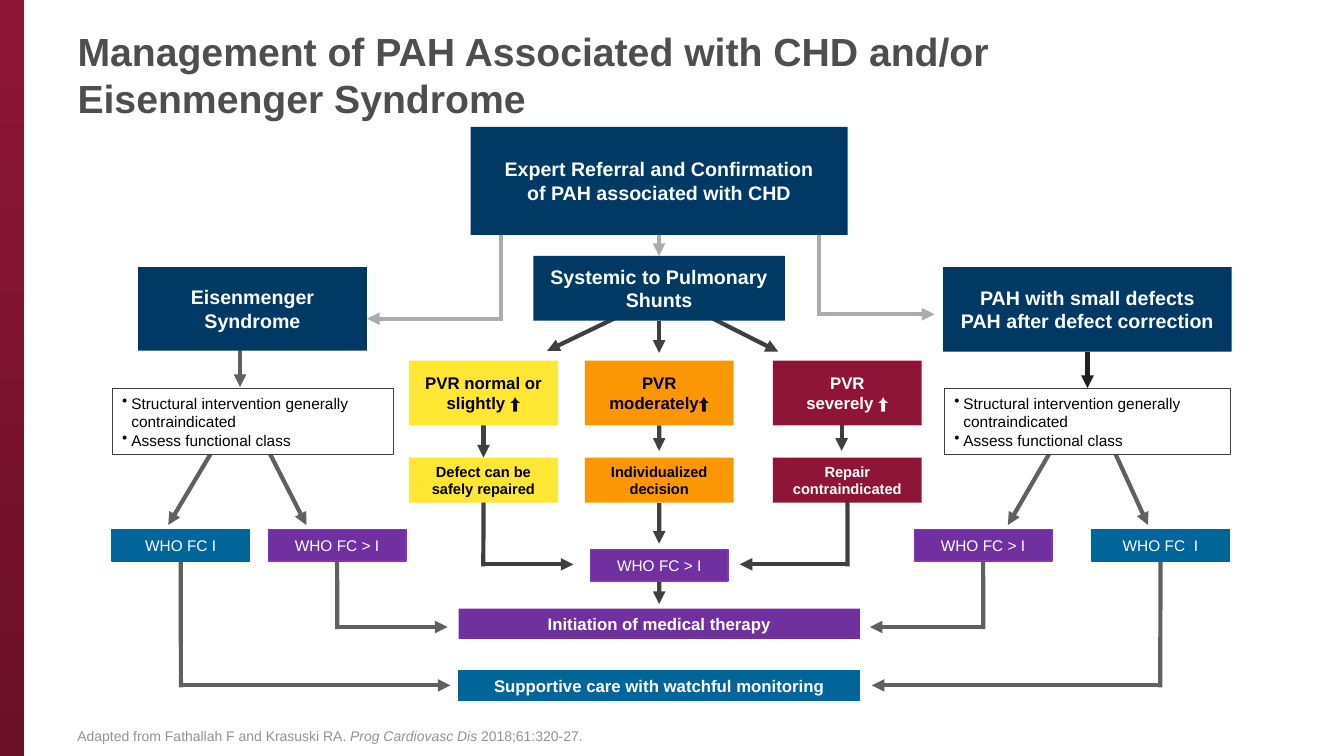
from lxml.etree import SubElement
from pptx import Presentation
from pptx.dml.color import RGBColor
from pptx.enum.shapes import MSO_CONNECTOR, MSO_SHAPE
from pptx.enum.text import MSO_ANCHOR, MSO_AUTO_SIZE, PP_ALIGN
from pptx.oxml.ns import qn
from pptx.util import Cm, Pt

WHITE = RGBColor(0xFF, 0xFF, 0xFF)
BLACK = RGBColor(0x00, 0x00, 0x00)
NAVY = RGBColor(0x00, 0x3A, 0x64)
BLUE = RGBColor(0x00, 0x66, 0x99)
PURPLE = RGBColor(0x70, 0x30, 0xA0)
VIOLET = RGBColor(0x80, 0x36, 0xBB)
YELLOW = RGBColor(0xFF, 0xE7, 0x33)
ORANGE = RGBColor(0xFB, 0x97, 0x05)
WINE = RGBColor(0x8E, 0x15, 0x37)
MAROON = RGBColor(0x6B, 0x10, 0x29)
INK = RGBColor(0x20, 0x20, 0x20)
DARK = RGBColor(0x3F, 0x3F, 0x3F)
GREY = RGBColor(0x60, 0x60, 0x60)
LIGHT = RGBColor(0xAA, 0xAC, 0xB1)
HEAD = RGBColor(0x4D, 0x4E, 0x4D)
NOTE = RGBColor(0x93, 0x93, 0x93)

prs = Presentation()
prs.slide_width, prs.slide_height = Cm(33.87), Cm(19.05)
slide = prs.slides.add_slide(prs.slide_layouts[5])
shapes = slide.shapes


def add_box(text, x, y, w, h, fill, size, color=WHITE, bold=True, edge=None, width=1):
    box = shapes.add_shape(MSO_SHAPE.RECTANGLE, Cm(x), Cm(y), Cm(w), Cm(h))
    box.shadow.inherit = False
    box.fill.solid()
    box.fill.fore_color.rgb = fill
    if edge is None:
        box.line.fill.background()
    else:
        box.line.color.rgb = edge
        box.line.width = Pt(width)
    frame = box.text_frame
    frame.text = text
    frame.word_wrap = True
    frame.vertical_anchor = MSO_ANCHOR.MIDDLE
    for par in frame.paragraphs:
        par.alignment = PP_ALIGN.CENTER
        par.font.name = "Arial"
        par.font.size = Pt(size)
        par.font.bold = bold
        par.font.color.rgb = color
    return box


def add_link(color, *stops):
    """Draw an arrow behind the boxes through points in cm; a box as
    first stop is left at its bottom, as last stop reached at its top."""
    spots = []
    for stop in stops:
        if isinstance(stop, tuple):
            spots.append((Cm(stop[0]), Cm(stop[1])))
        else:
            down = stop.height if stop is stops[0] else 0
            spots.append((stop.left + stop.width // 2, stop.top + down))
    last = len(spots) - 2
    for i, (start, end) in enumerate(zip(spots, spots[1:])):
        line = shapes.add_connector(MSO_CONNECTOR.STRAIGHT, *start, *end)
        line.line.color.rgb = color
        line.line.width = Pt(3)
        SubElement(line.element.spPr, qn("a:effectLst"))
        if not isinstance(stops[i], tuple):
            line.begin_connect(stops[i], 2)
        if not isinstance(stops[i + 1], tuple):
            line.end_connect(stops[i + 1], 0)
        ln = line.line._get_or_add_ln()
        if i == last:
            SubElement(ln, qn("a:tailEnd"), type="triangle")
        else:
            ln.set("cap", "sq")
        line.element.getparent().insert(2, line.element)


# Side band, title and citation
band = shapes.add_shape(MSO_SHAPE.RECTANGLE, 0, 0, Cm(0.61), prs.slide_height)
band.shadow.inherit = False
band.line.fill.background()
band.fill.gradient()
band.fill.gradient_angle = 270
for stop, color in zip(band.fill.gradient_stops, (WINE, MAROON)):
    stop.color.rgb = color

title = shapes.title
title.left, title.top, title.width, title.height = Cm(1.7), Cm(0.56), Cm(29.2), Cm(3.3)
frame = title.text_frame
frame.text = "Management of PAH Associated with CHD and/or Eisenmenger Syndrome"
frame.word_wrap = True
frame.auto_size = MSO_AUTO_SIZE.NONE
frame.vertical_anchor = MSO_ANCHOR.TOP
par = frame.paragraphs[0]
par.alignment = PP_ALIGN.LEFT
par.font.name, par.font.size, par.font.bold = "Arial", Pt(28), True
par.font.color.rgb = HEAD

cite = shapes.add_textbox(Cm(1.7), Cm(17.65), Cm(29.85), Cm(1.22)).text_frame
cite.word_wrap = True
cite.vertical_anchor = MSO_ANCHOR.BOTTOM
par = cite.paragraphs[0]
par.font.name, par.font.size = "Arial", Pt(10)
par.font.color.rgb = NOTE
for text, slant in (
    ("Adapted from Fathallah F and Krasuski RA. ", False),
    ("Prog Cardiovasc Dis ", True),
    ("2018;61:320-27.", False),
):
    run = par.add_run()
    run.text = text
    run.font.italic = slant

# Referral and the three diagnoses
expert = add_box("Expert Referral and Confirmation\nof PAH associated with CHD",
                 11.86, 3.2, 9.5, 2.72, NAVY, 14)
shunts = add_box("Systemic to Pulmonary Shunts", 13.44, 6.45, 6.34, 1.63, NAVY, 14)
add_box("Eisenmenger Syndrome", 3.48, 6.73, 5.77, 2.11, NAVY, 14)
small = add_box("PAH with small defects\nPAH after defect correction",
                23.77, 6.73, 7.27, 2.13, NAVY, 14)

# Resistance grades and the decision for each
grades, plans = [], []
for x, fill, color, grade, plan in (
    (10.31, YELLOW, BLACK, "PVR normal or slightly ⬆", "Defect can be safely repaired"),
    (14.74, ORANGE, BLACK, "PVR moderately⬆", "Individualized decision"),
    (19.48, WINE, WHITE, "PVR\nseverely ⬆", "Repair contraindicated"),
):
    grades.append(add_box(grade, x, 9.09, 3.75, 1.63, fill, 12, color))
    plans.append(add_box(plan, x, 11.53, 3.75, 1.14, fill, 10.5, color))

# Advice lists
lists = []
for x, w in ((2.83, 7.09), (23.8, 7.21)):
    advice = add_box("Structural intervention generally contraindicated\nAssess functional class",
                     x, 9.78, w, 1.68, WHITE, 11, BLACK, False, DARK, 0.75)
    for par in advice.text_frame.paragraphs:
        par.alignment = PP_ALIGN.LEFT
        props = par._p.get_or_add_pPr()
        props.set("marL", str(Cm(0.23)))
        props.set("indent", str(-Cm(0.23)))
        bullet = SubElement(props, qn("a:buChar"), char="•")
        props.insert(0, bullet)
        props.append(props.find(qn("a:defRPr")))
    lists.append(advice)

# Functional classes and treatments
classes = [
    add_box(text, x, y, 3.47, 0.8, fill, 11, WHITE, False, edge)
    for text, x, y, fill, edge in (
        ("WHO FC I", 2.82, 13.34, BLUE, BLUE),
        ("WHO FC > I", 6.76, 13.34, PURPLE, VIOLET),
        ("WHO FC > I", 14.88, 13.84, PURPLE, VIOLET),
        ("WHO FC > I", 23.04, 13.34, PURPLE, VIOLET),
        ("WHO FC  I", 27.51, 13.34, BLUE, BLUE),
    )
]
add_box("Initiation of medical therapy", 11.56, 15.34, 10.11, 0.76, PURPLE, 12)
add_box("Supportive care with watchful monitoring", 11.56, 16.89, 10.11, 0.76,
        BLUE, 12, edge=BLUE, width=0.75)

# Arrows from top to bottom
add_link(LIGHT, expert, shunts)
add_link(LIGHT, (12.62, 5.5), (12.62, 8.03), (9.25, 8.03))
add_link(LIGHT, (20.64, 5.5), (20.64, 7.92), (23.55, 7.92))
add_link(DARK, (15.7, 7.92), (13.79, 8.84))
add_link(DARK, shunts, (16.61, 8.89))
add_link(DARK, (17.65, 7.87), (19.61, 8.86))
add_link(GREY, (6.05, 8.3), (6.05, 9.75))
add_link(INK, small, lists[1])
add_link(DARK, grades[0], plans[0])
add_link(DARK, grades[1], (16.61, 11.36))
add_link(DARK, (21.21, 10.2), (21.21, 11.36))
for start, end in ((5.36, 4.24), (6.76, 7.72), (26.49, 25.4), (28.07, 28.93)):
    add_link(GREY, (start, 11.35), (end, 13.23))
add_link(DARK, plans[1], (16.61, 13.7))
add_link(DARK, classes[2], (16.61, 15.22))
for color, box, x, y, tip in (
    (DARK, plans[0], 12.18, 14.22, 14.45),
    (DARK, plans[2], 21.36, 14.22, 18.64),
    (GREY, classes[1], 8.5, 15.8, 11.28),
    (GREY, classes[3], 24.78, 15.8, 21.92),
    (GREY, classes[0], 4.56, 17.27, 11.35),
    (GREY, classes[4], 29.24, 17.27, 21.97),
):
    add_link(color, box, (x, y), (tip, y))

prs.save("out.pptx")
